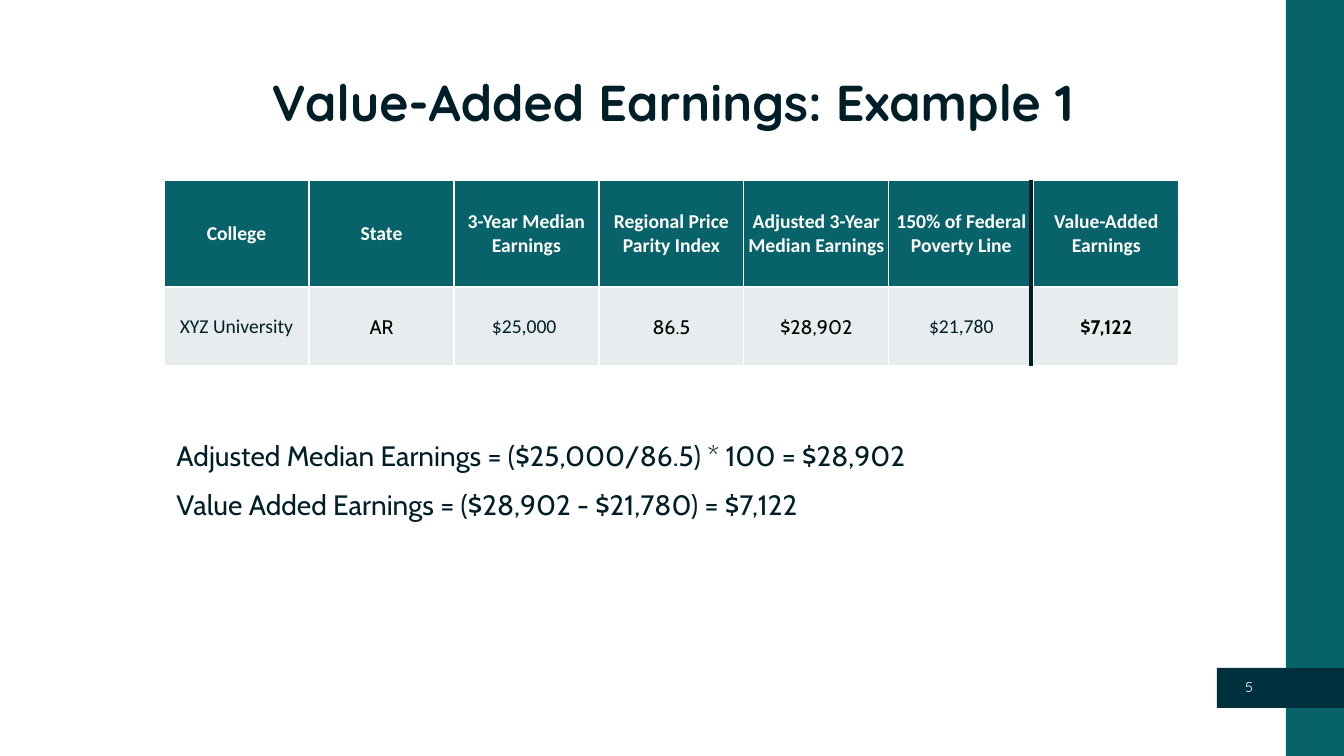
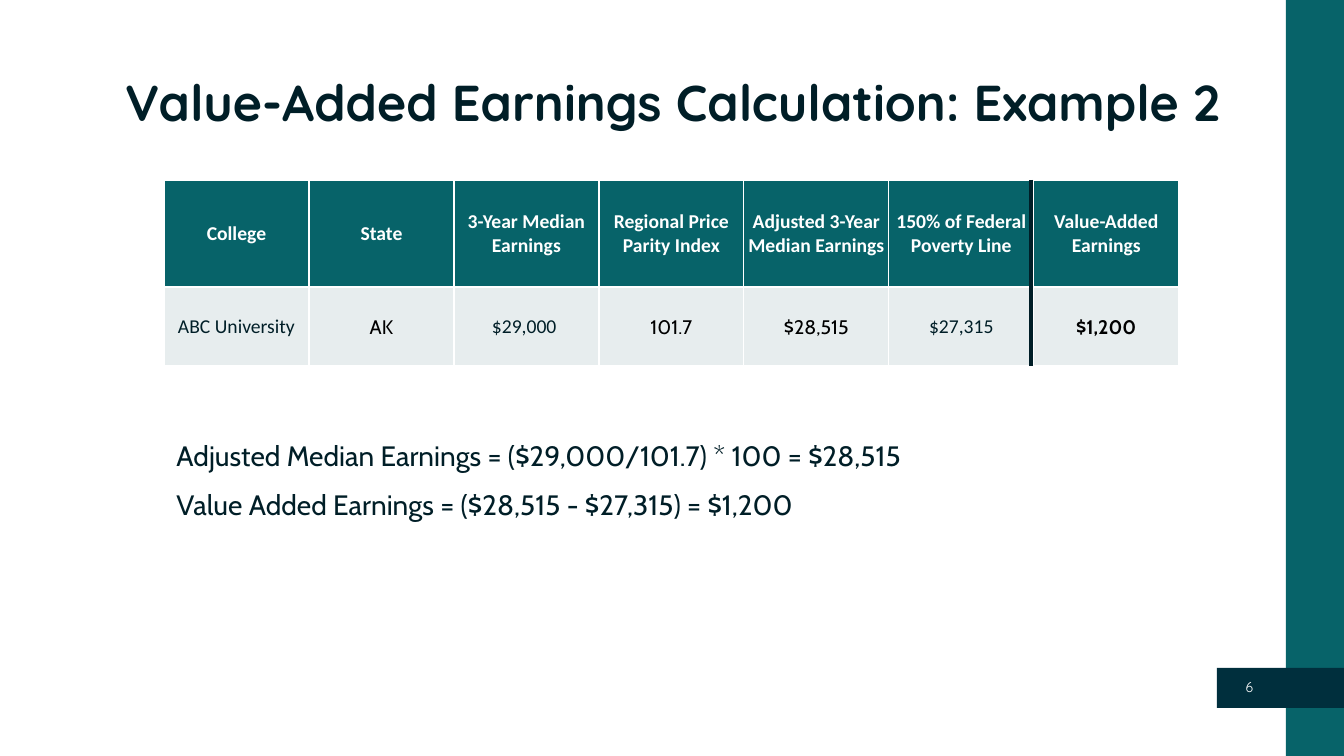
from dataclasses import dataclass

from lxml import etree
from pptx import Presentation
from pptx import util as u
from pptx.dml.color import RGBColor
from pptx.enum import shapes, text
from pptx.oxml.ns import qn

# Scale and shared look
EMU_PER_PX = 914400 / 100.8
TEAL = RGBColor(0x07, 0x63, 0x69)
NAVY = RGBColor(0x00, 0x2F, 0x3D)
INK = RGBColor(0x00, 0x1E, 0x27)
BLACK = RGBColor(0x00, 0x00, 0x00)
WHITE = RGBColor(0xFF, 0xFF, 0xFF)
MIST = RGBColor(0xE7, 0xED, 0xEE)


@dataclass(frozen=True)
class Box:
    left: int
    top: int
    width: int
    height: int

    def emu(self) -> tuple:
        return tuple(px(n) for n in (self.left, self.top, self.width, self.height))


@dataclass(frozen=True)
class TextStyle:
    color: RGBColor
    format: dict


@dataclass(frozen=True)
class Example:
    title: str
    page: str
    values: tuple
    formulas: tuple


def px(length: int) -> u.Emu:
    return u.Emu(round(length * EMU_PER_PX))


SLIDE_WIDTH, SLIDE_HEIGHT = 1344, 756
BANDS = ((Box(1286, 0, 58, SLIDE_HEIGHT), TEAL), (Box(1217, 668, 127, 40), NAVY))
TITLE_BOX = Box(93, 40, 1159, 97)
PAGE_BOX = Box(1131, 667, 132, 40)
FORMULA_BOX = Box(116, 428, 1063, 148)

TITLE = TextStyle(INK, {"name": "Quicksand", "size": u.Pt(36), "bold": True})
PAGE = TextStyle(WHITE, {"name": "Quicksand", "size": u.Pt(10), "bold": False})
FORMULA = TextStyle(INK, {"name": "Cabin", "size": u.Pt(20), "bold": False})
HEADING = TextStyle(WHITE, {"name": "Calibri", "size": u.Pt(14), "bold": True})
GIVEN = TextStyle(INK, {"name": "Calibri", "size": u.Pt(14), "bold": False})
LOOKUP = TextStyle(BLACK, {"name": "Cabin", "size": u.Pt(14), "bold": False})
RESULT = TextStyle(BLACK, {"name": "Cabin", "size": u.Pt(14), "bold": True})

# Table layout
TABLE_LEFT, TABLE_TOP, COLUMN_WIDTH = 164, 180, 145
ROW_HEIGHTS = (107, 79)
DIVIDER_X = 1031
HEADINGS = (
    "College", "State", "3-Year Median Earnings", "Regional Price Parity Index",
    "Adjusted 3-Year Median Earnings", "150% of Federal Poverty Line",
    "Value-Added Earnings",
)
VALUE_STYLES = (GIVEN, LOOKUP, GIVEN, LOOKUP, LOOKUP, GIVEN, RESULT)
CELL_FORMAT = {
    "vertical_anchor": text.MSO_ANCHOR.MIDDLE,
    "margin_left": px(1), "margin_right": px(1),
    "margin_top": px(1), "margin_bottom": 0,
}
FORMULA_FORMAT = {"line_spacing": 1.15, "space_before": u.Pt(0), "space_after": u.Pt(8),
                  "alignment": text.PP_ALIGN.LEFT}

EXAMPLES = (
    Example(
        "Value-Added Earnings: Example 1", "5",
        ("XYZ University", "AR", "$25,000 ", "86.5", "$28,902", "$21,780", "$7,122"),
        ("Adjusted Median Earnings = ($25,000/86.5) * 100 = $28,902",
         "Value Added Earnings = ($28,902 - $21,780) = $7,122"),
    ),
    Example(
        "Value-Added Earnings Calculation: Example 2", "6",
        ("ABC University", "AK", "$29,000 ", "101.7", "$28,515", "$27,315", "$1,200"),
        ("Adjusted Median Earnings = ($29,000/101.7) * 100 = $28,515",
         "Value Added Earnings = ($28,515 - $27,315) = $1,200"),
    ),
)


# Formatting helpers
def set_all(target, values: dict) -> None:
    for name, value in values.items():
        setattr(target, name, value)


def write(paragraph, words: str, style: TextStyle, alignment) -> None:
    paragraph.text = words
    paragraph.alignment = alignment
    set_all(paragraph.font, style.format)
    paragraph.font.color.rgb = style.color


def place(shape, box: Box, anchor) -> None:
    set_all(shape, dict(zip(("left", "top", "width", "height"), box.emu())))
    set_all(shape.text_frame, {"word_wrap": True, "vertical_anchor": anchor,
                               "auto_size": text.MSO_AUTO_SIZE.NONE})


def add_borders(cell) -> None:
    properties = cell._tc.get_or_add_tcPr()
    for side in ("a:lnL", "a:lnR", "a:lnT", "a:lnB"):
        line = etree.SubElement(properties, qn(side), w=str(u.Pt(1)))
        fill = etree.SubElement(line, qn("a:solidFill"))
        etree.SubElement(fill, qn("a:srgbClr"), val=str(WHITE))


# Slide parts
def add_bands(slide) -> None:
    for box, color in BANDS:
        band = slide.shapes.add_shape(shapes.MSO_SHAPE.RECTANGLE, *box.emu())
        band.shadow.inherit = False
        band.fill.solid()
        band.fill.fore_color.rgb = color
        band.line.fill.background()


def add_title(slide, words: str) -> None:
    title = slide.shapes.title
    place(title, TITLE_BOX, text.MSO_ANCHOR.BOTTOM)
    write(title.text_frame.paragraphs[0], words, TITLE, text.PP_ALIGN.CENTER)


def add_page_number(slide, number: str) -> None:
    page = slide.shapes.add_textbox(*PAGE_BOX.emu())
    place(page, PAGE_BOX, text.MSO_ANCHOR.MIDDLE)
    write(page.text_frame.paragraphs[0], number, PAGE, text.PP_ALIGN.RIGHT)


def add_earnings_table(slide, values: tuple) -> None:
    box = Box(TABLE_LEFT, TABLE_TOP, COLUMN_WIDTH * len(HEADINGS), sum(ROW_HEIGHTS))
    table = slide.shapes.add_table(len(ROW_HEIGHTS), len(HEADINGS), *box.emu()).table
    for column in table.columns:
        column.width = px(COLUMN_WIDTH)
    for row, height in zip(table.rows, ROW_HEIGHTS):
        row.height = px(height)
    rows = ((HEADINGS, (HEADING,) * len(HEADINGS), TEAL), (values, VALUE_STYLES, MIST))
    for row, (words, styles, color) in zip(table.rows, rows):
        for cell, word, style in zip(row.cells, words, styles):
            set_all(cell, CELL_FORMAT)
            add_borders(cell)
            cell.fill.solid()
            cell.fill.fore_color.rgb = color
            write(cell.text_frame.paragraphs[0], word, style, text.PP_ALIGN.CENTER)


def add_divider(slide) -> None:
    divider = slide.shapes.add_connector(
        shapes.MSO_CONNECTOR.STRAIGHT, px(DIVIDER_X), px(TABLE_TOP),
        px(DIVIDER_X), px(TABLE_TOP + sum(ROW_HEIGHTS)))
    divider.line.color.rgb = INK
    divider.line.width = u.Pt(3.25)
    etree.SubElement(divider.element.spPr, qn("a:effectLst"))


def add_formulas(slide, formulas: tuple) -> None:
    body = slide.placeholders[1]
    place(body, FORMULA_BOX, text.MSO_ANCHOR.TOP)
    frame = body.text_frame
    for index, formula in enumerate(formulas):
        paragraph = frame.add_paragraph() if index else frame.paragraphs[0]
        properties = paragraph._p.get_or_add_pPr()
        properties.set("marL", str(u.Inches(0.5)))
        properties.set("indent", "0")
        etree.SubElement(properties, qn("a:buNone"))
        write(paragraph, formula, FORMULA, text.PP_ALIGN.LEFT)
        set_all(paragraph, FORMULA_FORMAT)


def add_example(deck, example: Example) -> None:
    slide = deck.slides.add_slide(deck.slide_layouts[1])
    add_bands(slide)
    add_title(slide, example.title)
    add_page_number(slide, example.page)
    add_earnings_table(slide, example.values)
    add_divider(slide)
    add_formulas(slide, example.formulas)


def main() -> None:
    deck = Presentation()
    deck.slide_width, deck.slide_height = px(SLIDE_WIDTH), px(SLIDE_HEIGHT)
    for example in EXAMPLES:
        add_example(deck, example)
    deck.save("out.pptx")


if __name__ == "__main__":
    main()
